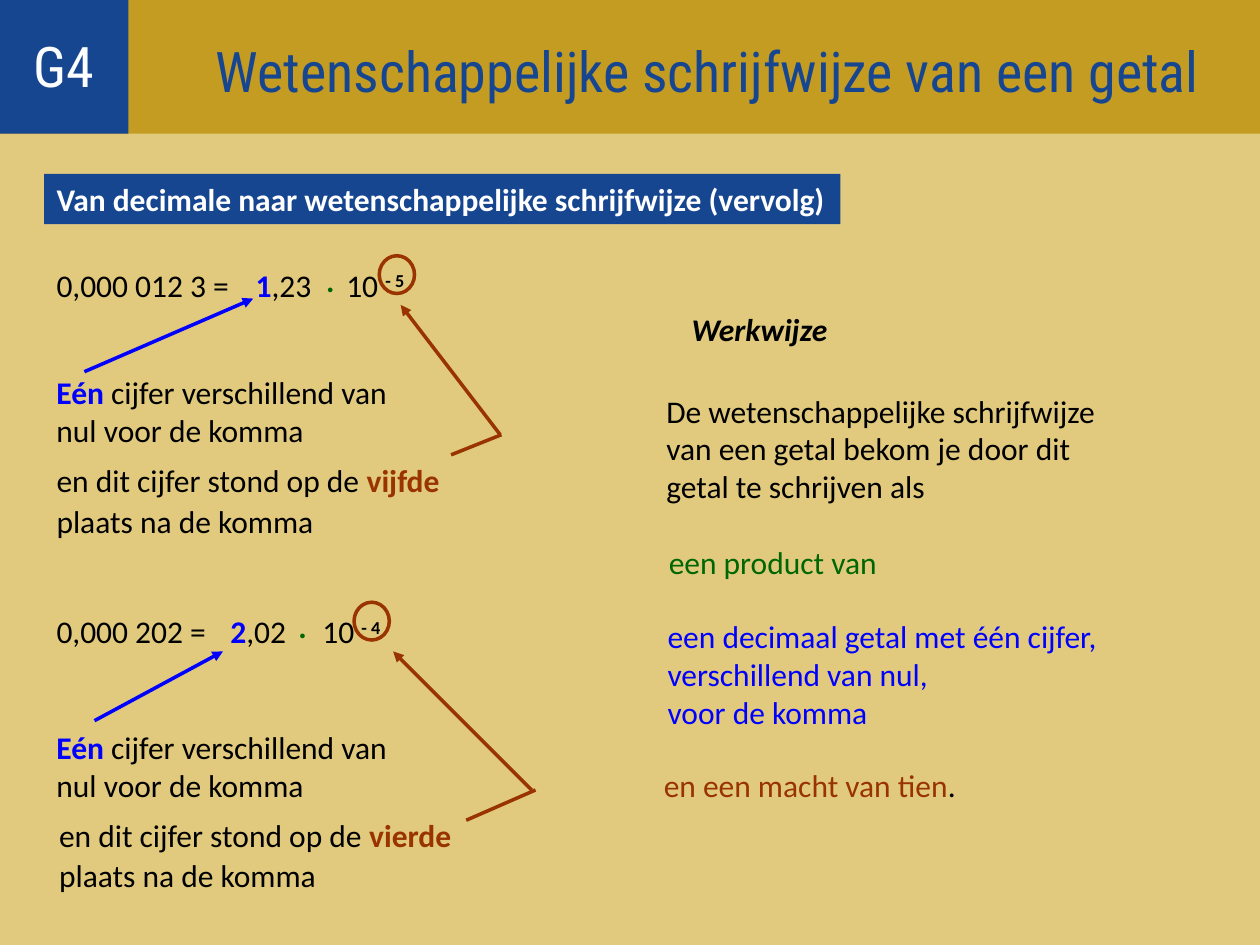
from pptx import Presentation
from pptx.dml.color import RGBColor
from pptx.enum.shapes import MSO_CONNECTOR, MSO_SHAPE
from pptx.enum.text import MSO_ANCHOR, PP_ALIGN
from pptx.oxml.ns import qn
from pptx.util import Emu, Pt
from lxml import etree

LINE = MSO_CONNECTOR.STRAIGHT
OVAL = MSO_SHAPE.OVAL
RECT = MSO_SHAPE.RECTANGLE
MID = MSO_ANCHOR.MIDDLE
TOP = MSO_ANCHOR.TOP
LEFT = PP_ALIGN.LEFT
MIDST = PP_ALIGN.CENTER

SAND = RGBColor(0xE1, 0xCA, 0x7D)
GOLD = RGBColor(0xC5, 0x9C, 0x22)
NAVY = RGBColor(0x17, 0x46, 0x91)
WHITE = RGBColor(0xFF, 0xFF, 0xFF)
PALE = RGBColor(0xFC, 0xFD, 0xFE)
BLACK = RGBColor(0, 0, 0)
BLUE = RGBColor(0, 0, 0xFF)
GREEN = RGBColor(0, 0x66, 0)
BROWN = RGBColor(0x99, 0x33, 0)

SCALE = 9144


def px(*nums):
    return [Emu(n * SCALE) for n in nums]


class Deck:
    body = "Calibri"
    head = "Roboto Condensed"

    def __init__(self):
        self.file = Presentation()
        self.file.slide_width, self.file.slide_height = px(1000, 750)
        self.slide = self.file.slides.add_slide(self.file.slide_layouts[5])
        fill = self.slide.background.fill
        fill.solid()
        fill.fore_color.rgb = SAND

    def font(self, run, name, size, color, bold=False, slant=False):
        font = run.font
        font.name, font.size = name, Pt(size)
        font.bold, font.italic = bold, slant
        font.color.rgb = color

    def title(self, text, box):
        shape = self.slide.shapes.title
        shape.left, shape.top, shape.width, shape.height = px(*box)
        shape.fill.solid()
        shape.fill.fore_color.rgb = GOLD
        frame = shape.text_frame
        frame.margin_left, frame.margin_top = px(134, 13)
        self.label(frame, text, self.head, 32, NAVY, MIDST, MID)

    def label(self, frame, text, name, size, color, align, anchor, bold=False):
        frame.text = text
        frame.vertical_anchor = anchor
        para = frame.paragraphs[0]
        para.alignment = align
        self.font(para.runs[0], name, size, color, bold)

    def block(self, text, box, name, size, color, align, anchor, bold, wrap):
        shape = self.slide.shapes.add_shape(RECT, *px(*box))
        shape.shadow.inherit = False
        shape.fill.solid()
        shape.fill.fore_color.rgb = NAVY
        shape.line.fill.background()
        shape.text_frame.word_wrap = wrap
        self.label(shape.text_frame, text, name, size, color, align, anchor, bold)

    def text(self, box, *parts, space=None, wrap=True):
        frame = self.slide.shapes.add_textbox(*px(*box)).text_frame
        frame.word_wrap = wrap
        para = frame.paragraphs[0]
        para.line_spacing = space
        for words, color, *style in parts:
            for row, line in enumerate(words.split("\n")):
                if row:
                    para.add_line_break()
                run = para.add_run()
                run.text = line
                self.font(run, self.body, 18, color, "b" in style, "i" in style)
                if "sup" in style:
                    run.font._element.set("baseline", "30000")

    def ring(self, box):
        shape = self.slide.shapes.add_shape(OVAL, *px(*box))
        shape.shadow.inherit = False
        shape.fill.background()
        shape.line.color.rgb = BROWN
        shape.line.width = Pt(2)

    def line(self, start, end, color, arrow=True):
        shape = self.slide.shapes.add_connector(LINE, *px(*start, *end))
        shape.line.color.rgb = color
        shape.line.width = Pt(2)
        if arrow:
            tail = etree.SubElement(shape.line._get_or_add_ln(), qn("a:tailEnd"))
            tail.set("type", "triangle")
        etree.SubElement(shape._element.spPr, qn("a:effectLst"))

    def sum(self, top, whole, digit, rest, power, lefts):
        first, second, dot, ten = lefts
        self.text((35, top, 228, 63), (whole, BLACK), space=1.5)
        self.text((second, top, 95, 63), (digit, BLUE, "b"), (rest, BLACK), space=1.5)
        self.text((dot, top - 4, 39, 63), (".", GREEN, "b"), space=1.5)
        self.text((ten, top, 102, 63), ("10 ", BLACK),
                  (power, BLACK, "b", "sup"), space=1.5)
        self.ring((first, top + 12, 28, 30))

    def rule(self, top, left, low, place):
        self.text((35, top, 347, 70), ("Eén ", BLUE, "b"),
                  ("cijfer verschillend van\nnul voor de komma", BLACK))
        self.text((left, low, 362, 73), ("en dit cijfer stond op de ", BLACK),
                  (place + " ", BROWN, "b"), ("plaats na de komma", BLACK),
                  space=1.08)


def main():
    deck = Deck()
    deck.title("Wetenschappelijke schrijfwijze van een getal", (0, -3, 1000, 109))
    deck.block("G4", (0, -3, 102, 109), deck.head, 32, PALE, MIDST, MID, False, True)
    deck.block("Van decimale naar wetenschappelijke schrijfwijze (vervolg)",
               (35, 138, 632, 40), deck.body, 18, WHITE, LEFT, TOP, True, False)

    deck.sum(191, "0,000 012 3 =", "1", ",23", "- 5", (301, 193, 249, 265))
    deck.rule(291, 35, 359, "vijfde")
    deck.line((67, 295), (201, 237), BLUE)
    deck.line((397, 345), (318, 242), BROWN)
    deck.line((398, 345), (358, 361), BROWN, False)

    deck.sum(466, "0,000 202 =", "2", ",02", "- 4", (281, 173, 227, 246))
    deck.rule(573, 37, 640, "vierde")
    deck.line((75, 572), (177, 517), BLUE)
    deck.line((422, 627), (312, 517), BROWN)
    deck.line((370, 651), (425, 627), BROWN, False)

    deck.text((539, 241, 129, 40), ("Werkwijze", BLACK, "b", "i"), wrap=False)
    deck.text((519, 306, 449, 100),
              ("De wetenschappelijke schrijfwijze\nvan een getal bekom je door dit\n"
               "getal te schrijven als", BLACK))
    deck.text((521, 426, 187, 40), ("een product van", GREEN), wrap=False)
    deck.text((520, 485, 449, 100),
              ("een decimaal getal met één cijfer, verschillend van nul,\n"
               "voor de komma", BLUE))
    deck.text((517, 603, 424, 40), ("en een macht van tien", BROWN), (".", BLACK))
    deck.file.save("out.pptx")


if __name__ == "__main__":
    main()
